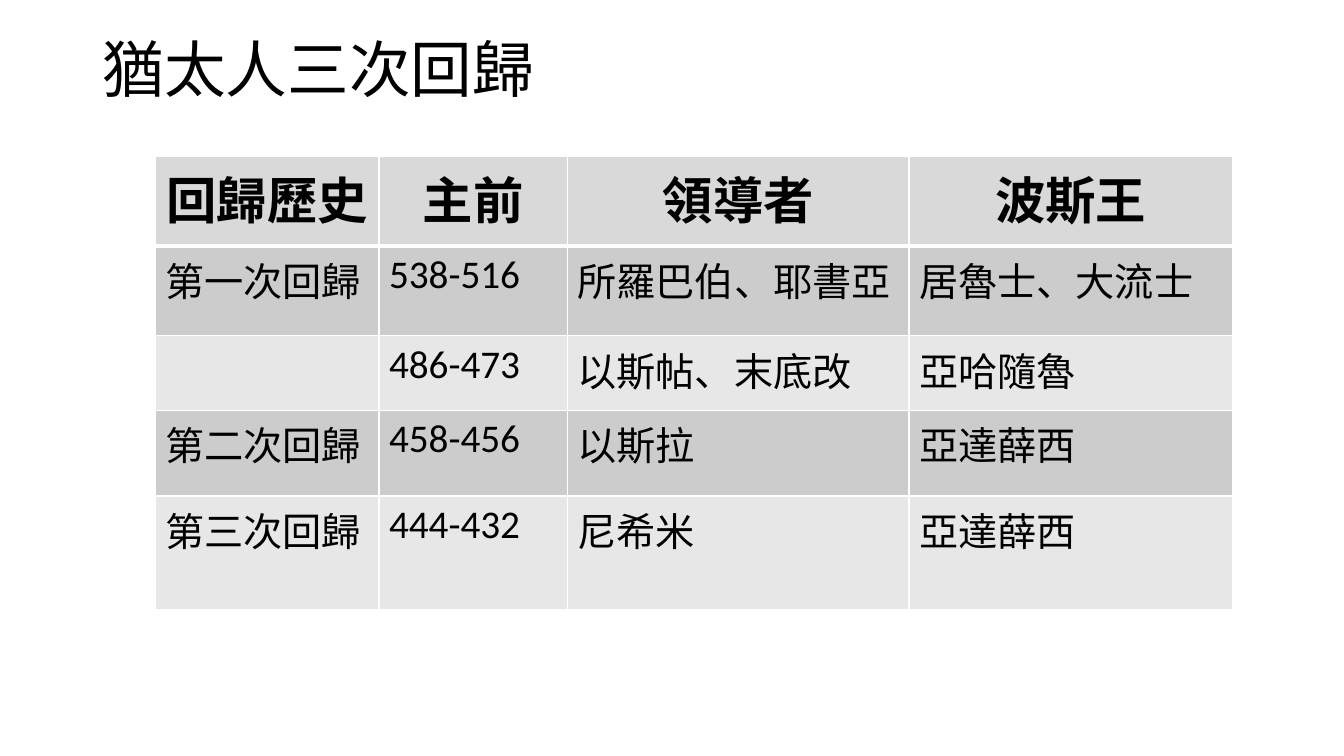
import pptx
import pptx.dml.color
import pptx.enum.text
import pptx.oxml
import pptx.oxml.ns
import pptx.util
from pptx.util import Cm

FONT = "Calibri"
COLUMN_WIDTHS = [5.64, 4.75, 8.61, 8.15]
ROW_HEIGHTS = [2.26, 2.26, 1.88, 2.16, 2.87]
RETURNS = [
    ["回歸歷史", "主前", "領導者", "波斯王"],
    ["第一次回歸", "538-516", "所羅巴伯、耶書亞", "居魯士、大流士"],
    ["", "486-473", "以斯帖、末底改", "亞哈隨魯"],
    ["第二次回歸", "458-456", "以斯拉", "亞達薛西"],
    ["第三次回歸", "444-432", "尼希米", "亞達薛西"],
]


def colour(value):
    """Return the colour for a hex string."""
    return pptx.dml.color.RGBColor.from_string(value)


def write(frame, text, size, bold=False, centred=False):
    """Put one styled paragraph into a text frame."""
    para = frame.paragraphs[0]
    para.text = text
    para.font.name = FONT
    para.font.size = pptx.util.Pt(size)
    para.font.bold = bold
    para.font.color.rgb = colour("000000")
    if centred:
        para.alignment = pptx.enum.text.PP_ALIGN.CENTER
    return para


def add_title(page, text):
    """Add the slide heading."""
    box = page.shapes.add_textbox(Cm(2.34), Cm(0), Cm(29.21), Cm(3.68))
    frame = box.text_frame
    frame.word_wrap = True
    frame.vertical_anchor = pptx.enum.text.MSO_ANCHOR.MIDDLE
    write(frame, text, 44).line_spacing = 0.9


def set_borders(cell, widths):
    """Draw white borders on a cell, with widths in points by side."""
    properties = cell._tc.get_or_add_tcPr()
    for index, (side, width) in enumerate(widths.items()):
        line = pptx.oxml.parse_xml(
            f'<a:ln{side} {pptx.oxml.ns.nsdecls("a")} w="{pptx.util.Pt(width)}">'
            '<a:solidFill><a:srgbClr val="FFFFFF"/></a:solidFill>'
            f'</a:ln{side}>'
        )
        properties.insert(index, line)


def style_cell(cell, text, row):
    """Fill one cell according to its row."""
    header = row == 0
    fill = "D9D9D9" if header else ("E7E7E7", "CCCCCC")[row % 2]
    cell.fill.solid()
    cell.fill.fore_color.rgb = colour(fill)
    write(cell.text_frame, text, 36 if header else 28, header, header)
    top = 3 if row == 1 else 1
    bottom = 3 if header else 1
    set_borders(cell, {"L": 1, "R": 1, "T": top, "B": bottom})


def add_returns_table(page):
    """Add the table of the three returns."""
    table = page.shapes.add_table(
        len(ROW_HEIGHTS), len(COLUMN_WIDTHS), Cm(3.91), Cm(3.94),
        Cm(sum(COLUMN_WIDTHS)), Cm(sum(ROW_HEIGHTS)),
    ).table
    for column, width in zip(table.columns, COLUMN_WIDTHS):
        column.width = Cm(width)
    for row, (height, texts) in enumerate(zip(ROW_HEIGHTS, RETURNS)):
        table.rows[row].height = Cm(height)
        for column, text in enumerate(texts):
            style_cell(table.cell(row, column), text, row)


def main():
    """Build and save the deck."""
    deck = pptx.Presentation()
    deck.slide_width = Cm(33.87)
    deck.slide_height = Cm(19.05)
    page = deck.slides.add_slide(deck.slide_layouts[6])
    add_title(page, "猶太人三次回歸")
    add_returns_table(page)
    deck.save("out.pptx")


if __name__ == "__main__":
    main()
